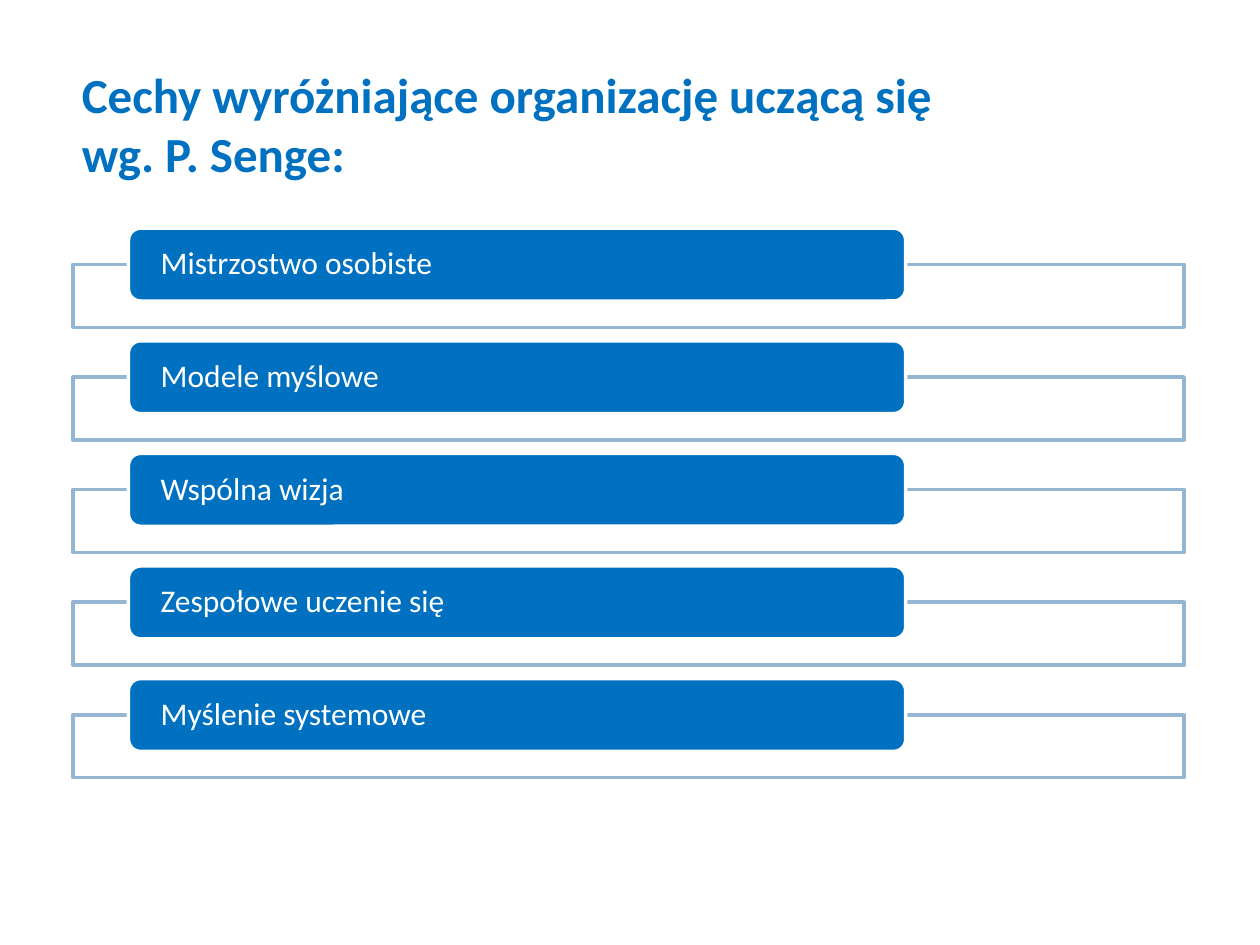
from pptx import Presentation
from pptx.dml.color import RGBColor
from pptx.enum.shapes import MSO_SHAPE
from pptx.enum.text import MSO_ANCHOR, MSO_AUTO_SIZE, PP_ALIGN
from pptx.oxml.ns import qn
from pptx.util import Cm, Pt
from lxml.etree import SubElement

BLUE, PALE_BLUE, WHITE = "0070C0", "94B6D2", "FFFFFF"
FEATURES = [
    "Mistrzostwo osobiste",
    "Modele myślowe",
    "Wspólna wizja",
    "Zespołowe uczenie się",
    "Myślenie systemowe",
]
ROW_TOP, ROW_PITCH = 4.6, 2.27


def paint(color_owner, color):
    color_owner.rgb = RGBColor.from_string(color)


def add_box(page, kind, left, top, width, height, fill, line):
    box = page.shapes.add_shape(kind, Cm(left), Cm(top), Cm(width), Cm(height))
    box.shadow.inherit = False
    box.fill.solid()
    paint(box.fill.fore_color, fill)
    paint(box.line.color, line)
    box.line.width = Pt(2)
    return box


deck = Presentation()
deck.slide_width, deck.slide_height = Cm(25.4), Cm(19.05)
page = deck.slides.add_slide(deck.slide_layouts[6])

# One outlined frame with a label on its top edge per feature
for row, feature in enumerate(FEATURES):
    top = ROW_TOP + row * ROW_PITCH
    frame = add_box(page, MSO_SHAPE.RECTANGLE, 1.47, top + 0.73, 22.4, 1.27,
                    WHITE, PALE_BLUE)
    fill_color = frame.fill._xPr.find(qn("a:solidFill"))[0]
    SubElement(fill_color, qn("a:alpha"), val="90000")

    label = add_box(page, MSO_SHAPE.ROUNDED_RECTANGLE, 2.59, top, 15.67, 1.47,
                    BLUE, WHITE)
    text = label.text_frame
    text.text = feature
    text.word_wrap = True
    text.vertical_anchor = MSO_ANCHOR.MIDDLE
    text.margin_left = text.margin_right = Cm(0.58)
    text.margin_top = text.margin_bottom = 0
    paragraph = text.paragraphs[0]
    paragraph.alignment = PP_ALIGN.LEFT
    paragraph.line_spacing = 0.9
    span = paragraph.runs[0]
    span.font.name, span.font.size = "Calibri", Pt(18)
    paint(span.font.color, WHITE)

# Title
title = page.shapes.add_textbox(Cm(1.4), Cm(1.17), Cm(17.7), Cm(4.19))
text = title.text_frame
text.text = "Cechy wyróżniające organizację uczącą się wg. P. Senge:"
text.word_wrap = True
text.auto_size = MSO_AUTO_SIZE.SHAPE_TO_FIT_TEXT
span = text.paragraphs[0].runs[0]
span.font.name, span.font.size, span.font.bold = "Calibri", Pt(28), True
paint(span.font.color, BLUE)

deck.save("out.pptx")
